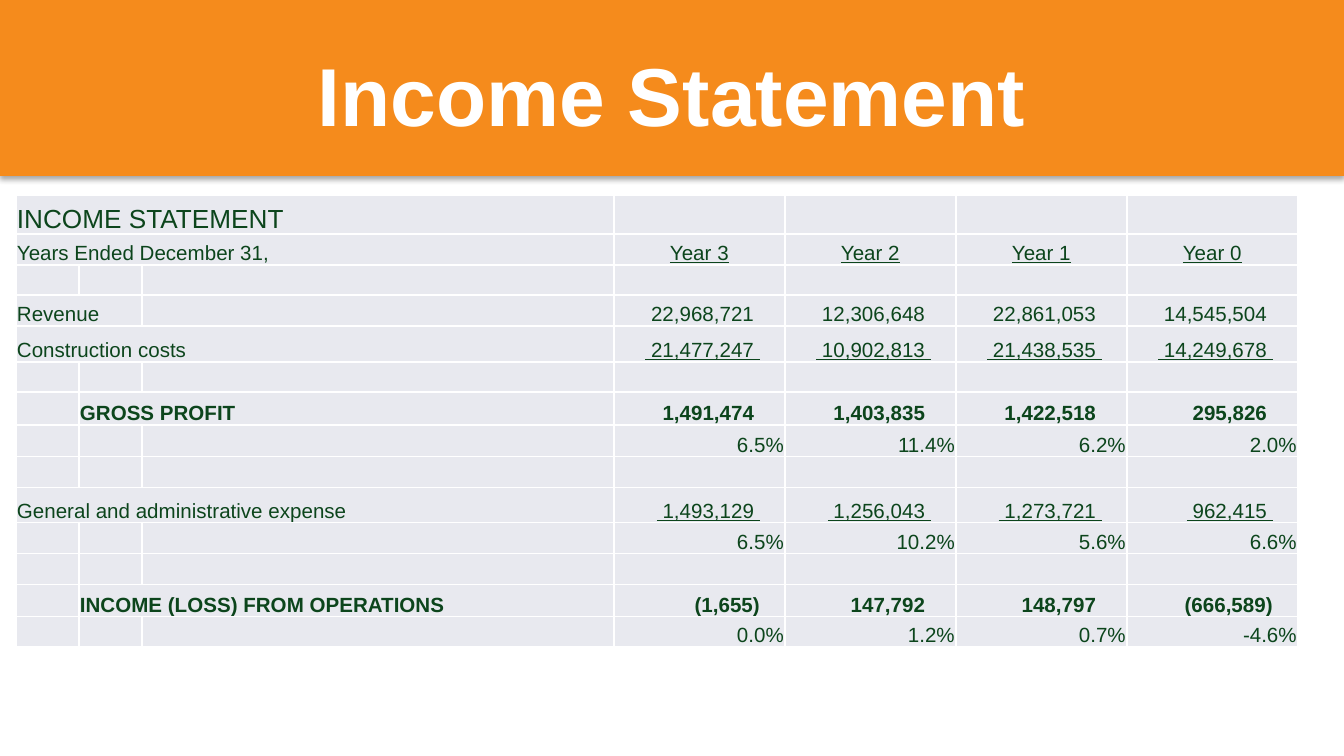
from lxml import etree
from pptx import Presentation
from pptx import util as u
from pptx.dml.color import RGBColor
from pptx.enum import shapes, text
from pptx.oxml import parse_xml
from pptx.oxml.ns import nsdecls, qn

ORANGE, GREEN, GREY, WHITE = "F58B1C", "0C451C", "E8E9EF", "FFFFFF"
LEFT, CENTER, RIGHT = text.PP_ALIGN.LEFT, text.PP_ALIGN.CENTER, text.PP_ALIGN.RIGHT
PX_PER_INCH = 134.4
NBSP = chr(160)
BLANK = ("", 0, 1, "blank", [])

COLUMNS = [63, 63, 472] + [171] * 4
# label, first label column, columns spanned, kind of values, values, row height
ROWS = [
    ("INCOME STATEMENT", 0, 3, "heading", [], 39),
    ("Years Ended December 31,", 0, 3, "years", ["Year 3", "Year 2", "Year 1", "Year 0"], 31),
    (*BLANK, 30),
    ("Revenue", 0, 2, "amount", ["22,968,721", "12,306,648", "22,861,053", "14,545,504"], 31),
    ("Construction costs", 0, 3, "cost", ["21,477,247", "10,902,813", "21,438,535", "14,249,678"], 36),
    (*BLANK, 30),
    ("GROSS PROFIT", 1, 2, "total", ["1,491,474", "1,403,835", "1,422,518", "295,826"], 33),
    ("", 0, 1, "percent", ["6.5%", "11.4%", "6.2%", "2.0%"], 32),
    (*BLANK, 31),
    ("General and administrative expense", 0, 3, "cost",
     ["1,493,129", "1,256,043", "1,273,721", "962,415"], 35),
    ("", 0, 1, "percent", ["6.5%", "10.2%", "5.6%", "6.6%"], 31),
    (*BLANK, 31),
    ("INCOME (LOSS) FROM OPERATIONS", 1, 2, "total",
     ["(1,655)", "147,792", "148,797", "(666,589)"], 32),
    ("", 0, 1, "percent", ["0.0%", "1.2%", "0.7%", "-4.6%"], 30),
]


def px(n):
    return u.Emu(round(n * 914400 / PX_PER_INCH))


def rgb(value):
    return RGBColor.from_string(value)


def write(tf, words, size=11, color=GREEN, align=LEFT, bold=False, underline=False):
    p = tf.paragraphs[0]
    p.alignment = align
    if not words:
        # An empty cell keeps its row low only if its end mark is small.
        etree.SubElement(p._p, qn("a:endParaRPr"), sz=str(size * 100))
        return
    r = p.add_run()
    r.text = words
    r.font.name, r.font.size = "Arial", u.Pt(size)
    r.font.color.rgb = rgb(color)
    r.font.bold, r.font.underline = bold, underline


def accounting(value):
    """Pad a number so that its digits line up with those in brackets."""
    return value if value.endswith(")") else NBSP + value + NBSP


def add_banner(s, x, y, w, h):
    sp = s.shapes.add_shape(shapes.MSO_SHAPE.RECTANGLE, px(x), px(y), px(w), px(h))
    sp.fill.solid()
    sp.fill.fore_color.rgb = rgb(ORANGE)
    sp.line.fill.background()
    sp._element.spPr.append(parse_xml(
        f'<a:effectLst {nsdecls("a")}><a:outerShdw blurRad="39400" dist="22900" dir="5400000" '
        'rotWithShape="0"><a:srgbClr val="000000"><a:alpha val="35000"/></a:srgbClr>'
        '</a:outerShdw></a:effectLst>'))
    s.shapes._spTree.insert(2, sp._element)

    title = s.shapes.title
    title.left, title.top = px(x + 67), px(y + 31)
    title.width, title.height = px(w - 134), px(126)
    title.text_frame.vertical_anchor = text.MSO_ANCHOR.MIDDLE
    write(title.text_frame, "Income Statement", size=44, color=WHITE, align=CENTER, bold=True)


def format_cell(cell, right=1):
    cell.margin_left = cell.margin_top = px(1)
    cell.margin_right, cell.margin_bottom = px(right), 0
    cell.vertical_anchor = text.MSO_ANCHOR.BOTTOM
    for side in "LRTB":
        cell._tc.tcPr.append(parse_xml(
            f'<a:ln{side} {nsdecls("a")} w="12700"><a:solidFill><a:srgbClr val="{WHITE}"/>'
            f'</a:solidFill></a:ln{side}>'))
    cell.fill.solid()
    cell.fill.fore_color.rgb = rgb(GREY)


def add_statement(s, x, y):
    frame = s.shapes.add_table(len(ROWS), len(COLUMNS), px(x), px(y),
                               px(sum(COLUMNS)), px(sum(row[-1] for row in ROWS)))
    table = frame.table
    table.first_row = table.horz_banding = False
    for column, width in zip(table.columns, COLUMNS):
        column.width = px(width)

    for i, (label, first, span, kind, values, height) in enumerate(ROWS):
        table.rows[i].height = px(height)
        is_amount = kind in ("amount", "cost", "total")
        words = [""] * 3 + (values or [""] * 4)
        words[first] = label
        for j, word in enumerate(words):
            cell = table.cell(i, j)
            is_value = j >= 3
            format_cell(cell, right=25 if is_value and is_amount else 1)
            align = LEFT
            if is_value:
                align = CENTER if kind == "years" else RIGHT
            if is_value and is_amount:
                word = accounting(word)
            write(cell.text_frame, word, size=14 if kind == "heading" else 11, align=align,
                  bold=kind == "total", underline=is_value and kind in ("years", "cost"))
        if span > 1:
            table.cell(i, first).merge(table.cell(i, first + span - 1))


def main():
    prs = Presentation()
    prs.slide_width, prs.slide_height = px(1344), px(756)
    s = prs.slides.add_slide(prs.slide_layouts[5])
    add_banner(s, 0, 0, 1344, 176)
    add_statement(s, 16, 195)
    prs.save("out.pptx")


if __name__ == "__main__":
    main()
